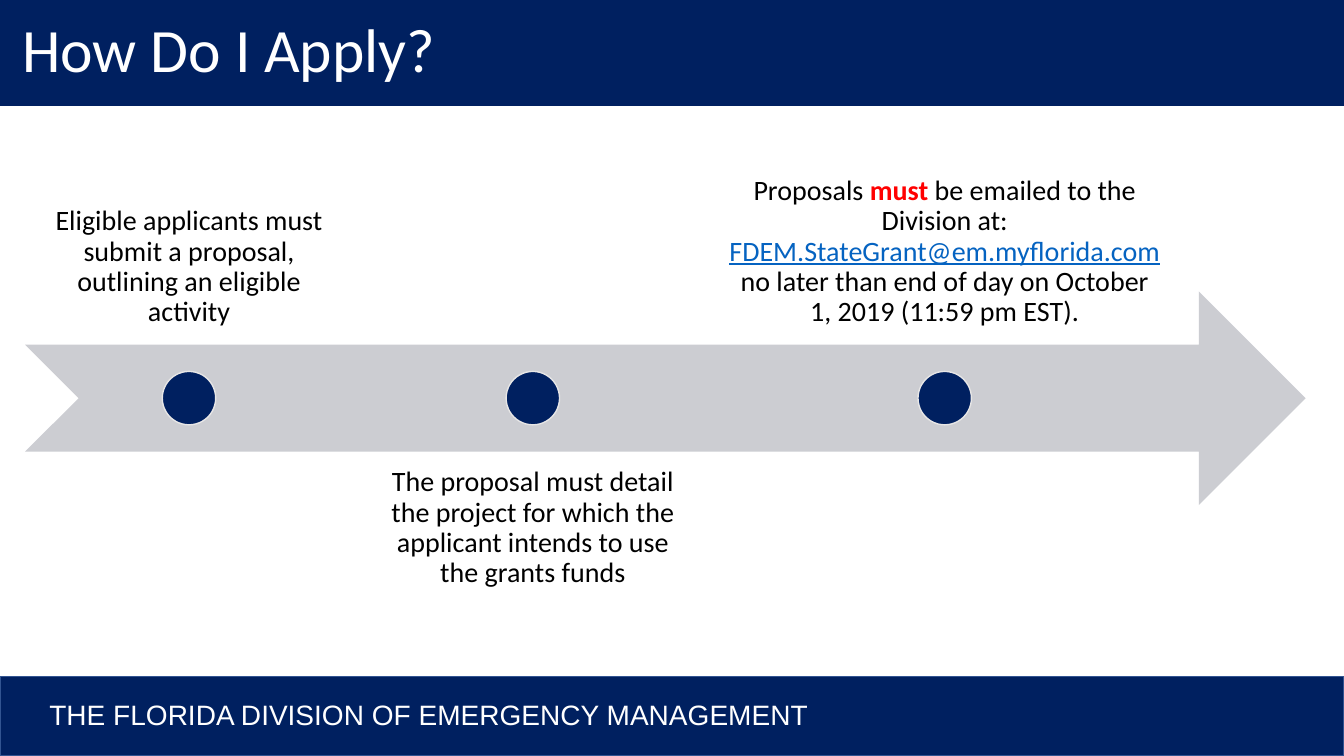
import pptx
import pptx.dml.color
import pptx.enum.shapes
import pptx.enum.text
import pptx.util

Inches = pptx.util.Inches
Pt = pptx.util.Pt
SHAPE = pptx.enum.shapes.MSO_SHAPE
ANCHOR = pptx.enum.text.MSO_ANCHOR
ALIGN = pptx.enum.text.PP_ALIGN

TITLE = "How Do I Apply?"
FOOTER = "THE FLORIDA DIVISION OF EMERGENCY MANAGEMENT"

# Each step: width, side of the arrow, runs of (text, style)
STEPS = [
    (3.25, "above", [
        ("Eligible applicants must submit a proposal, outlining an eligible activity", "plain"),
    ]),
    (3.25, "below", [
        ("The proposal must detail the project for which the applicant intends to use the grants funds", "plain"),
    ]),
    (4.6, "above", [
        ("Proposals ", "plain"),
        ("must", "warning"),
        (" be emailed to the Division at: ", "plain"),
        ("FDEM.StateGrant@em.myflorida.com", "address"),
        (" no later than end of day on October 1, 2019 (11:59 pm EST).", "plain"),
    ]),
]

THEME = {
    "navy": "002060", "footer_edge": "325491", "arrow": "CCCDD2", "dot_edge": "E7E6E6",
    "white": "FFFFFF", "plain": "000000", "warning": "FF0000", "address": "0563C1",
    "body_font": "Calibri", "footer_font": "Arial",
    "title_size": 44, "body_size": 20, "edge_width": 1,
}

SLIDE_WIDTH, SLIDE_HEIGHT = 13.33, 7.5
TITLE_HEIGHT = 1.05
FOOTER_HEIGHT = 0.79
ARROW_LEFT, ARROW_WIDTH = 0.25, 12.7
BAND_HEIGHT = 2.12  # arrow and step texts share this height
ARROW_TOP = 2.89
TEXT_TOPS = {"above": 1.29, "below": 4.48}
STEP_GAP = 0.16
TEXT_INSET = 0.16
DOT_SIZE = 0.53


def color(name):
    return pptx.dml.color.RGBColor.from_string(THEME[name])


def add_filled(slide, kind, left, top, width, height, fill, edge=None):
    shape = slide.shapes.add_shape(kind, Inches(left), Inches(top), Inches(width), Inches(height))
    shape.shadow.inherit = False
    shape.fill.solid()
    shape.fill.fore_color.rgb = color(fill)
    if edge:
        shape.line.color.rgb = color(edge)
        shape.line.width = Pt(THEME["edge_width"])
    else:
        shape.line.fill.background()
    return shape


def add_run(paragraph, text, font, size, ink):
    run = paragraph.add_run()
    run.text = text
    run.font.name = THEME[font]
    run.font.size = Pt(THEME[size])
    run.font.color.rgb = color(ink)
    return run


def add_bar(slide, top, height, text, left_inset, font, size, edge=None):
    """Full-width navy bar with a left-aligned label."""
    bar = add_filled(slide, SHAPE.RECTANGLE, 0, top, SLIDE_WIDTH, height, "navy", edge)
    frame = bar.text_frame
    frame.word_wrap = True
    frame.vertical_anchor = ANCHOR.MIDDLE
    frame.margin_left = Inches(left_inset)
    label = frame.paragraphs[0]
    label.alignment = ALIGN.LEFT
    label.line_spacing = 0.9
    add_run(label, text, font, size, "white")


def add_step(slide, left, width, side, runs):
    box = slide.shapes.add_textbox(
        Inches(left), Inches(TEXT_TOPS[side]), Inches(width), Inches(BAND_HEIGHT))
    frame = box.text_frame
    frame.word_wrap = True
    frame.vertical_anchor = ANCHOR.BOTTOM if side == "above" else ANCHOR.TOP
    frame.margin_left = frame.margin_right = Inches(TEXT_INSET)
    frame.margin_top = frame.margin_bottom = Inches(TEXT_INSET)
    instruction = frame.paragraphs[0]
    instruction.alignment = ALIGN.CENTER
    instruction.line_spacing = 0.9
    for text, style in runs:
        run = add_run(instruction, text, "body_font", "body_size", style)
        run.font.bold = style == "warning"
        run.font.underline = style == "address"

    dot_left = left + (width - DOT_SIZE) / 2
    dot_top = ARROW_TOP + (BAND_HEIGHT - DOT_SIZE) / 2
    add_filled(slide, SHAPE.OVAL, dot_left, dot_top, DOT_SIZE, DOT_SIZE, "navy", "dot_edge")


def main():
    deck = pptx.Presentation()
    deck.slide_width = Inches(SLIDE_WIDTH)
    deck.slide_height = Inches(SLIDE_HEIGHT)
    slide = deck.slides.add_slide(deck.slide_layouts[6])

    add_bar(slide, SLIDE_HEIGHT - FOOTER_HEIGHT, FOOTER_HEIGHT, FOOTER, 0.49,
            "footer_font", "body_size", "footer_edge")
    add_bar(slide, 0, TITLE_HEIGHT, TITLE, 0.22, "body_font", "title_size")
    add_filled(slide, SHAPE.NOTCHED_RIGHT_ARROW, ARROW_LEFT, ARROW_TOP,
               ARROW_WIDTH, BAND_HEIGHT, "arrow")

    left = ARROW_LEFT
    for width, side, runs in STEPS:
        add_step(slide, left, width, side, runs)
        left += width + STEP_GAP

    deck.save("out.pptx")


if __name__ == "__main__":
    main()
